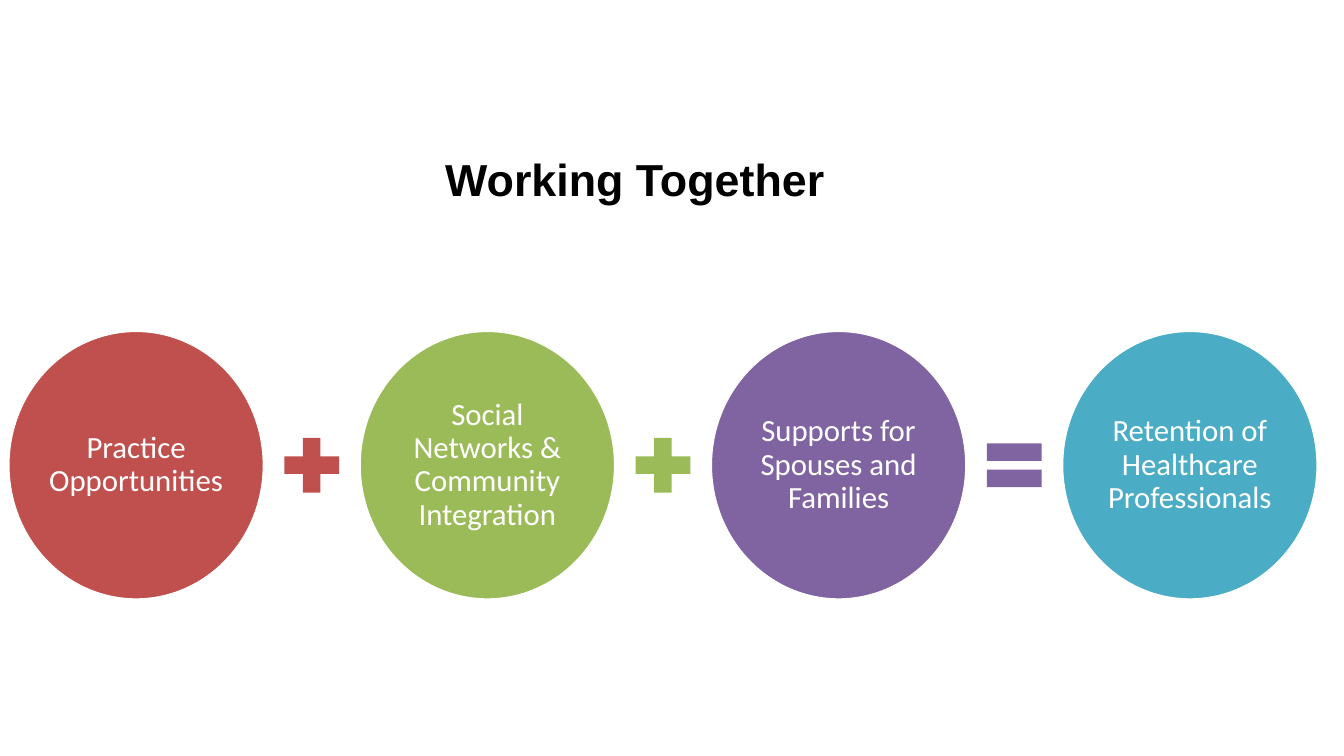
from dataclasses import dataclass

import pptx
import pptx.dml.color
import pptx.enum.shapes
import pptx.enum.text
import pptx.shapes.autoshape
import pptx.slide
import pptx.text.text
import pptx.util

Pt = pptx.util.Pt
RGBColor = pptx.dml.color.RGBColor
Shape = pptx.shapes.autoshape.Shape
ShapeKind = pptx.enum.shapes.MSO_SHAPE
Anchor = pptx.enum.text.MSO_ANCHOR


@dataclass(frozen=True)
class Theme:
    black: str = "000000"
    white: str = "FFFFFF"
    red: str = "C0504D"
    green: str = "9BBB59"
    purple: str = "8064A2"
    teal: str = "4BACC6"
    title_font: str = "Arial"
    body_font: str = "Calibri"
    title_size: float = 32
    body_size: float = 22


@dataclass(frozen=True)
class Term:
    label: str
    color: str
    operator: pptx.enum.shapes.MSO_SHAPE | None = None


THEME = Theme()
TERMS = [
    Term("Practice Opportunities", THEME.red, ShapeKind.MATH_PLUS),
    Term("Social Networks & Community Integration", THEME.green, ShapeKind.MATH_PLUS),
    Term("Supports for Spouses and Families", THEME.purple, ShapeKind.MATH_EQUAL),
    Term("Retention of Healthcare Professionals", THEME.teal),
]

FIRST_LEFT = 5.8
PITCH = 250.9
CENTER_Y = 332.3
CIRCLE_WIDTH = 182.8
CIRCLE_HEIGHT = 192.2
OPERATOR_SIZE = 53.2
OPERATOR_CENTER = (CIRCLE_WIDTH + PITCH) / 2


def write_text(shape: Shape, text: str, font_name: str, size: float, color: str,
               anchor: Anchor, inset: float) -> pptx.text.text._Paragraph:
    frame = shape.text_frame
    frame.word_wrap = True
    frame.vertical_anchor = anchor
    frame.margin_left = frame.margin_right = Pt(inset)
    frame.margin_top = frame.margin_bottom = Pt(inset)
    paragraph = frame.paragraphs[0]
    paragraph.alignment = pptx.enum.text.PP_ALIGN.CENTER
    run = paragraph.add_run()
    run.text = text
    run.font.name = font_name
    run.font.size = Pt(size)
    run.font.color.rgb = RGBColor.from_string(color)
    return paragraph


def add_filled_shape(slide: pptx.slide.Slide, kind: ShapeKind, center_x: float,
                     width: float, height: float, color: str) -> Shape:
    shape = slide.shapes.add_shape(
        kind, Pt(center_x - width / 2), Pt(CENTER_Y - height / 2), Pt(width), Pt(height))
    shape.shadow.inherit = False
    shape.fill.solid()
    shape.fill.fore_color.rgb = RGBColor.from_string(color)
    shape.line.fill.background()
    return shape


def add_title(slide: pptx.slide.Slide, text: str) -> None:
    title = slide.shapes.add_textbox(Pt(39.6), Pt(108), Pt(828), Pt(38.9))
    paragraph = write_text(title, text, THEME.title_font, THEME.title_size,
                           THEME.black, Anchor.BOTTOM, 0)
    paragraph.runs[0].font.bold = True


def add_term(slide: pptx.slide.Slide, term: Term, left: float) -> None:
    circle = add_filled_shape(slide, ShapeKind.OVAL, left + CIRCLE_WIDTH / 2,
                              CIRCLE_WIDTH, CIRCLE_HEIGHT, term.color)
    circle.line.color.rgb = RGBColor.from_string(THEME.white)
    circle.line.width = Pt(2)
    paragraph = write_text(circle, term.label, THEME.body_font, THEME.body_size,
                           THEME.white, Anchor.MIDDLE, 2)
    paragraph.line_spacing = 0.9
    if term.operator is not None:
        add_filled_shape(slide, term.operator, left + OPERATOR_CENTER,
                         OPERATOR_SIZE, OPERATOR_SIZE, term.color)


def main() -> None:
    presentation = pptx.Presentation()
    presentation.slide_width = Pt(960)
    presentation.slide_height = Pt(540)
    slide = presentation.slides.add_slide(presentation.slide_layouts[6])
    add_title(slide, "Working Together")
    for index, term in enumerate(TERMS):
        add_term(slide, term, FIRST_LEFT + index * PITCH)
    presentation.save("out.pptx")


if __name__ == "__main__":
    main()
